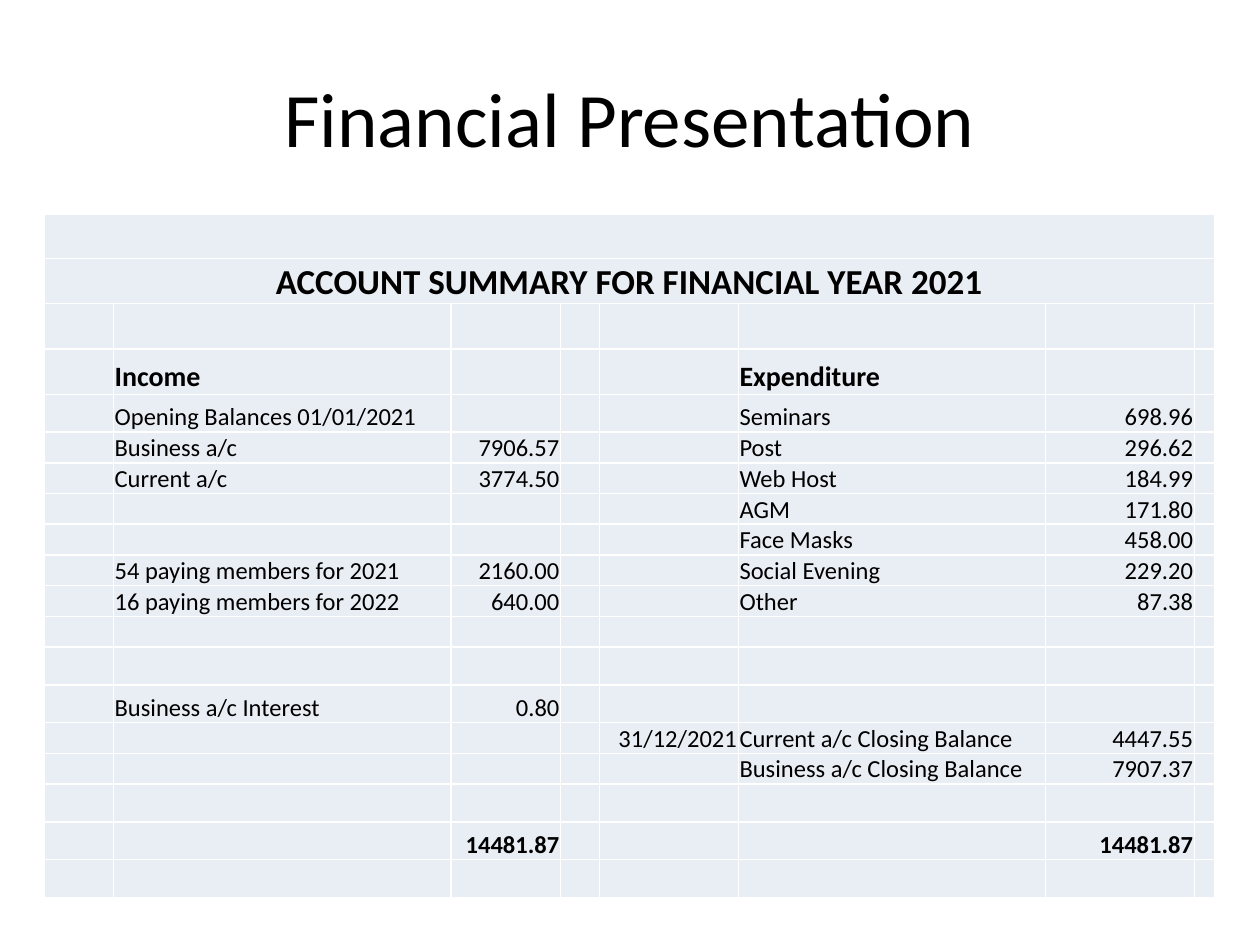
from pptx import Presentation
from pptx.dml.color import RGBColor
from pptx.enum.text import MSO_ANCHOR, PP_ALIGN
from pptx.util import Inches, Pt

COLORS = {"text": "000000", "cell": "E9EDF4"}
FONT = "Calibri"


def style(paragraph, size, align, bold=False):
    paragraph.alignment = align
    paragraph.font.name = FONT
    paragraph.font.size = Pt(size)
    paragraph.font.bold = bold
    paragraph.font.color.rgb = RGBColor.from_string(COLORS["text"])


prs = Presentation()
prs.slide_width, prs.slide_height = Inches(10), Inches(7.5)
slide = prs.slides.add_slide(prs.slide_layouts[6])

title = slide.shapes.add_textbox(Inches(0.5), Inches(0.3), Inches(9), Inches(1.25)).text_frame
title.word_wrap = True
title.vertical_anchor = MSO_ANCHOR.MIDDLE
title.text = "Financial Presentation"
style(title.paragraphs[0], 44, PP_ALIGN.CENTER)

column_widths = [0.55, 2.68, 0.87, 0.31, 1.1, 2.44, 1.18, 0.16]
row_heights = [0.35] + [0.36] * 3 + [0.3] + [0.24] * 7 + [0.3] * 2 + [0.24] * 2 + [0.3] * 3
HEADING_ROW, LABEL_ROW, TOTAL_ROW = 1, 3, 17
AMOUNT_COLUMNS = (2, 4, 6)

entries = {
    HEADING_ROW: {0: "ACCOUNT SUMMARY FOR FINANCIAL YEAR 2021"},
    LABEL_ROW: {1: "Income", 5: "Expenditure"},
    4: {1: "Opening Balances 01/01/2021", 5: "Seminars", 6: "698.96"},
    5: {1: "Business a/c", 2: "7906.57", 5: "Post", 6: "296.62"},
    6: {1: "Current a/c", 2: "3774.50", 5: "Web Host", 6: "184.99"},
    7: {5: "AGM", 6: "171.80"},
    8: {5: "Face Masks", 6: "458.00"},
    9: {1: "54 paying members for 2021", 2: "2160.00", 5: "Social Evening", 6: "229.20"},
    10: {1: "16 paying members for 2022", 2: "640.00", 5: "Other", 6: "87.38"},
    13: {1: "Business a/c Interest", 2: "0.80"},
    14: {4: "31/12/2021", 5: "Current a/c Closing Balance", 6: "4447.55"},
    15: {5: "Business a/c Closing Balance", 6: "7907.37"},
    TOTAL_ROW: {2: "14481.87", 6: "14481.87"},
}

accounts = slide.shapes.add_table(
    len(row_heights), len(column_widths), Inches(0.35), Inches(1.7),
    Inches(sum(column_widths)), Inches(sum(row_heights)),
).table
accounts.first_row = False
accounts.horz_banding = False
for column, width in zip(accounts.columns, column_widths):
    column.width = Inches(width)
for row, height in zip(accounts.rows, row_heights):
    row.height = Inches(height)
for r in (0, HEADING_ROW):
    accounts.cell(r, 0).merge(accounts.cell(r, len(column_widths) - 1))

sizes = {HEADING_ROW: 20, LABEL_ROW: 16}
for r in range(len(row_heights)):
    for c in range(len(column_widths)):
        cell = accounts.cell(r, c)
        cell.fill.solid()
        cell.fill.fore_color.rgb = RGBColor.from_string(COLORS["cell"])
        cell.margin_left = cell.margin_right = cell.margin_top = Inches(0.01)
        cell.margin_bottom = 0
        cell.vertical_anchor = MSO_ANCHOR.BOTTOM
        cell.text = entries.get(r, {}).get(c, "")
        if r == HEADING_ROW:
            align = PP_ALIGN.CENTER
        elif c in AMOUNT_COLUMNS:
            align = PP_ALIGN.RIGHT
        else:
            align = PP_ALIGN.LEFT
        bold = r in (HEADING_ROW, LABEL_ROW, TOTAL_ROW)
        style(cell.text_frame.paragraphs[0], sizes.get(r, 14), align, bold)

prs.save("out.pptx")
